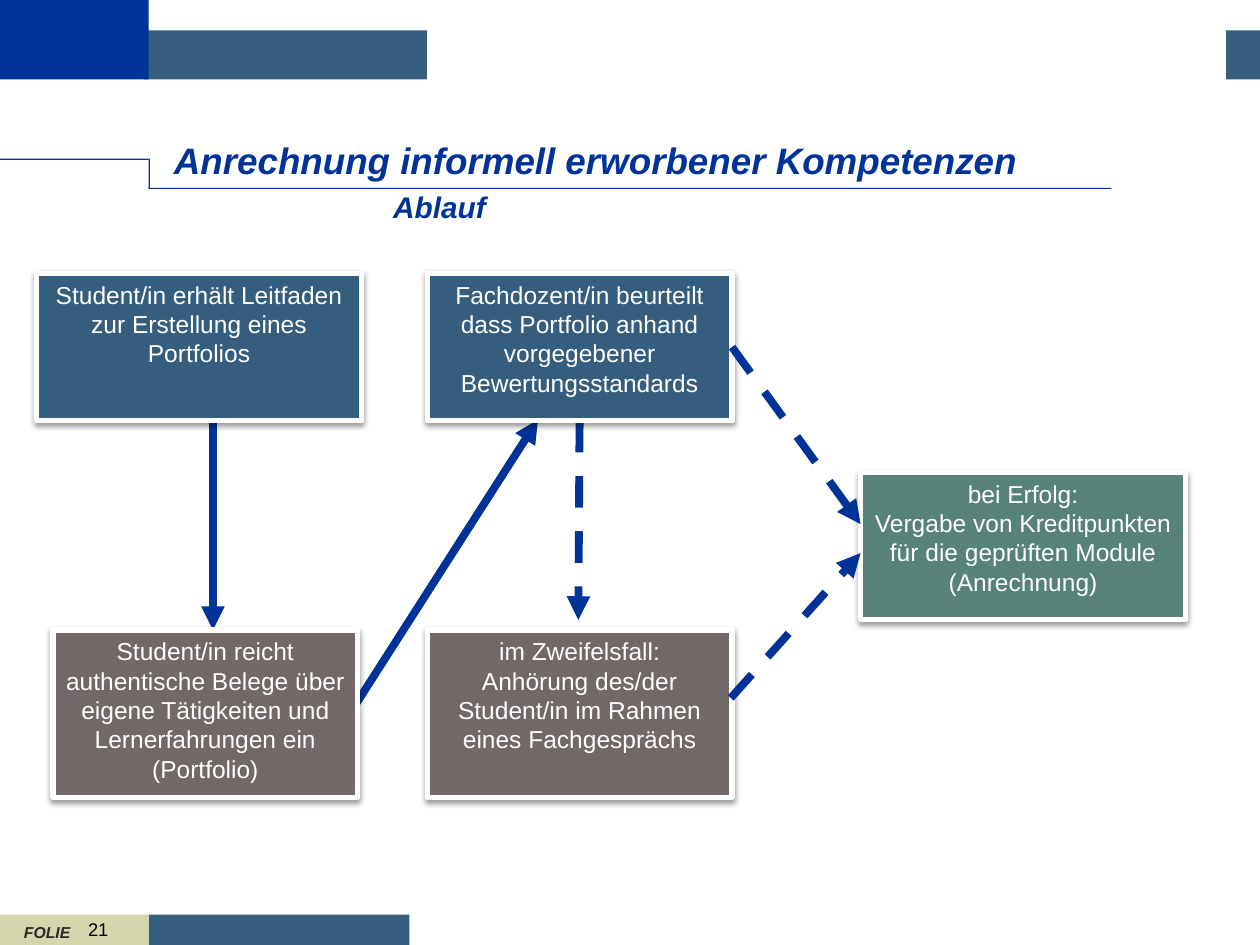
from dataclasses import dataclass

from lxml import etree
from pptx import Presentation
from pptx import util as u
from pptx.dml import color
from pptx.enum import dml, shapes, text
from pptx.oxml import ns


@dataclass(frozen=True)
class Theme:
    font: str = "Arial"
    blue: str = "003399"
    steel: str = "355D7E"
    sand: str = "D6D6AD"
    taupe: str = "726868"
    green: str = "578279"
    white: str = "FFFFFF"
    black: str = "000000"
    dark: str = "292929"
    title_size: float = 21
    subtitle_size: float = 17
    body_size: float = 14
    number_size: float = 10.5
    footer_size: float = 9
    arrow_width: float = 4.5
    border_width: float = 3


THEME = Theme()
NO_INSETS = dict.fromkeys(("margin_left", "margin_top", "margin_right", "margin_bottom"), 0)


def rgb(value):
    return color.RGBColor.from_string(value)


def set_attributes(target, values):
    for name, value in values.items():
        setattr(target, name, value)


def add_xml(parent, tag, **attributes):
    return etree.SubElement(parent, ns.qn(tag), attributes)


def write(shape, content, size, tint, frame_format=None, emphasis=False, alignment=text.PP_ALIGN.LEFT):
    frame = shape.text_frame
    set_attributes(frame, {"word_wrap": True, "auto_size": text.MSO_AUTO_SIZE.NONE,
                           "vertical_anchor": text.MSO_ANCHOR.TOP, **(frame_format or {})})
    paragraph = frame.paragraphs[0]
    paragraph.text = content
    paragraph.alignment = alignment
    set_attributes(paragraph.font, {"name": THEME.font, "size": u.Pt(size),
                                    "bold": emphasis, "italic": emphasis})
    paragraph.font.color.rgb = rgb(tint)


def add_rectangle(slide, place, fill):
    shape = slide.shapes.add_shape(shapes.MSO_SHAPE.RECTANGLE, *map(u.Inches, place))
    shape.shadow.inherit = False
    shape.fill.solid()
    shape.fill.fore_color.rgb = rgb(fill)
    shape.line.fill.background()
    return shape


def add_step(slide, place, fill, content):
    shape = add_rectangle(slide, place, fill)
    shape.line.color.rgb = rgb(THEME.white)
    shape.line.width = u.Pt(THEME.border_width)
    effects = shape._element.spPr.find(ns.qn("a:effectLst"))
    shadow = add_xml(effects, "a:outerShdw", blurRad="40000", dist="20000",
                     dir="5400000", rotWithShape="0")
    shade = add_xml(shadow, "a:srgbClr", val=THEME.black)
    add_xml(shade, "a:alpha", val="38000")
    write(shape, content, THEME.body_size, THEME.white, alignment=text.PP_ALIGN.CENTER)
    return shape


def add_arrow(slide, start, end, dashed=False):
    arrow = slide.shapes.add_connector(shapes.MSO_CONNECTOR.STRAIGHT, *map(u.Inches, start + end))
    arrow.line.color.rgb = rgb(THEME.blue)
    arrow.line.width = u.Pt(THEME.arrow_width)
    if dashed:
        arrow.line.dash_style = dml.MSO_LINE.DASH
    add_xml(arrow.line._get_or_add_ln(), "a:tailEnd", type="triangle")
    add_xml(arrow._element.spPr, "a:effectLst")
    return arrow


def add_label(slide, place, content, size, tint, **formats):
    label = slide.shapes.add_textbox(*map(u.Inches, place))
    write(label, content, size, tint, **formats)


def add_title(slide, place, content):
    title = slide.shapes.title
    set_attributes(title, dict(zip(("left", "top", "width", "height"), map(u.Inches, place))))
    write(title, content, THEME.title_size, THEME.blue, emphasis=True,
          frame_format={**NO_INSETS, "vertical_anchor": text.MSO_ANCHOR.BOTTOM})


def add_frame(slide):
    for place, fill in (
        ((1.14, 0.24, 8.86, 0.39), THEME.steel),
        ((3.39, 0, 4.29, 0.84), THEME.white),
        ((0, 0, 1.18, 0.63), THEME.blue),
        ((1.18, 7.26, 2.07, 0.24), THEME.steel),
        ((0, 7.26, 1.18, 0.24), THEME.sand),
        ((0, 1.26, 1.18, 0.01), THEME.blue),
        ((1.18, 1.49, 7.64, 0.01), THEME.blue),
        ((1.18, 1.26, 0.01, 0.24), THEME.blue),
        ((7.13, 0, 2.6, 0.84), THEME.white),
    ):
        add_rectangle(slide, place, fill)
    add_label(slide, (0.19, 7.32, 0.64, 0.15), "FOLIE", THEME.footer_size, THEME.dark, emphasis=True,
              frame_format={**NO_INSETS, "vertical_anchor": text.MSO_ANCHOR.BOTTOM})
    add_label(slide, (0.6, 7.24, 0.62, 0.21), "21", THEME.number_size, THEME.black)


def add_process(slide):
    hearing_arrow = add_arrow(slide, (4.59, 3.33), (4.59, 4.92), dashed=True)
    add_arrow(slide, (1.69, 3.33), (1.69, 5))
    add_arrow(slide, (2.83, 5.58), (4.27, 3.33))

    top, bottom, middle = 2.17, 5, 3.39
    narrow, wide, low, high = 2.42, 2.58, 1.17, 1.33
    add_step(slide, (0.42, bottom, narrow, high), THEME.taupe,
             "Student/in reicht authentische Belege über eigene Tätigkeiten "
             "und Lernerfahrungen ein (Portfolio)")
    review = add_step(slide, (middle, top, narrow, low), THEME.steel,
                      "Fachdozent/in beurteilt dass Portfolio anhand "
                      "vorgegebener Bewertungsstandards")
    add_step(slide, (0.29, top, wide, low), THEME.steel,
             "Student/in erhält Leitfaden zur Erstellung eines Portfolios")
    add_step(slide, (6.83, 3.75, wide, low), THEME.green,
             "bei Erfolg:\nVergabe von Kreditpunkten für die geprüften Module (Anrechnung)")
    add_step(slide, (middle, bottom, narrow, high), THEME.taupe,
             "im Zweifelsfall:\nAnhörung des/der Student/in im Rahmen eines Fachgesprächs")

    success_arrow = add_arrow(slide, (5.8, 2.77), (6.83, 4.16), dashed=True)
    add_arrow(slide, (5.8, 5.54), (6.83, 4.39), dashed=True)
    hearing_arrow.begin_connect(review, 2)
    success_arrow.begin_connect(review, 3)


def main():
    presentation = Presentation()
    set_attributes(presentation, {"slide_width": u.Inches(10), "slide_height": u.Inches(7.5)})
    slide = presentation.slides.add_slide(presentation.slide_layouts[5])
    add_frame(slide)
    add_title(slide, (1.38, 0.71, 8.5, 0.73), "Anrechnung informell erworbener Kompetenzen")
    add_label(slide, (3.12, 1.5, 6.29, 0.28), "Ablauf", THEME.subtitle_size, THEME.blue,
              frame_format=NO_INSETS, emphasis=True)
    add_process(slide)
    presentation.save("out.pptx")


if __name__ == "__main__":
    main()
